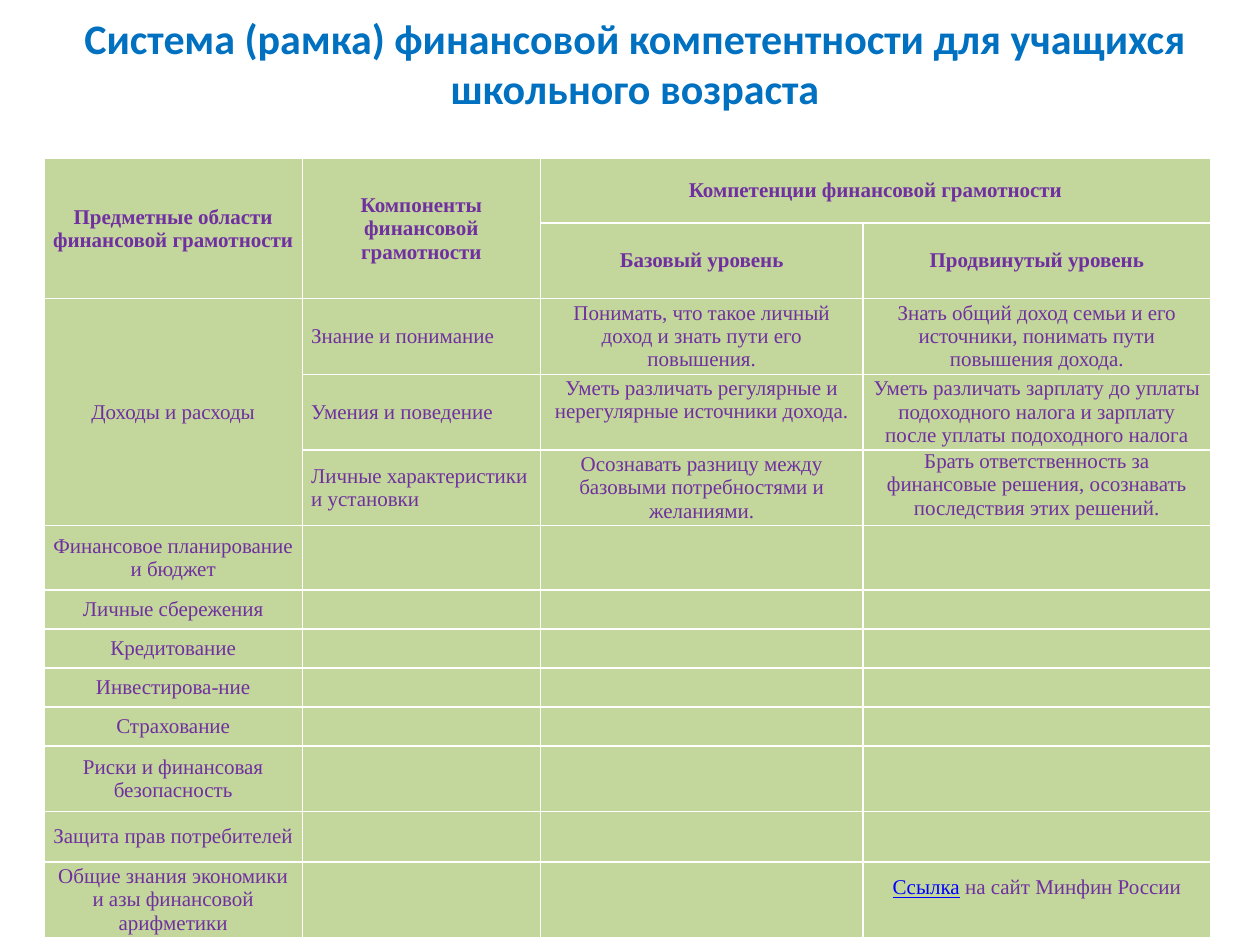
from lxml.etree import SubElement
from pptx import Presentation
from pptx.dml.color import RGBColor
from pptx.enum.text import MSO_ANCHOR, MSO_AUTO_SIZE, PP_ALIGN
from pptx.oxml.ns import qn
from pptx.util import Inches, Pt

BLUE = RGBColor(0x00, 0x70, 0xC0)
PURPLE = RGBColor(0x70, 0x30, 0xA0)
GREEN = RGBColor(0xC3, 0xD6, 0x9B)
LINK_BLUE = RGBColor(0x00, 0x00, 0xFF)
WHITE = RGBColor(0xFF, 0xFF, 0xFF)


def add_run(paragraph, text, font_name, size, color, bold=False):
    run = paragraph.add_run()
    run.text = text
    run.font.name = font_name
    run.font.size = Pt(size)
    run.font.color.rgb = color
    run.font.bold = bold
    return run


def add_borders(cell, color, width):
    properties = cell._tc.get_or_add_tcPr()
    for position, side in enumerate(("lnL", "lnR", "lnT", "lnB")):
        line = SubElement(properties, qn(f"a:{side}"), w=str(width))
        fill = SubElement(line, qn("a:solidFill"))
        SubElement(fill, qn("a:srgbClr"), val=str(color))
        properties.insert(position, line)  # borders precede the cell fill


prs = Presentation()
prs.slide_width, prs.slide_height = Inches(10), Inches(7.5)
slide = prs.slides.add_slide(prs.slide_layouts[6])

# Title
title = slide.shapes.add_textbox(Inches(0.51), Inches(0.05), Inches(9.06), Inches(0.91)).text_frame
title.word_wrap = True
title.auto_size = MSO_AUTO_SIZE.SHAPE_TO_FIT_TEXT
title.paragraphs[0].alignment = PP_ALIGN.CENTER
add_run(title.paragraphs[0],
        "Система (рамка) финансовой компетентности для учащихся школьного возраста",
        "Calibri", 24, BLUE, bold=True)

# Table content: missing trailing cells stay empty
SUBJECTS = ["Финансовое планирование и бюджет", "Личные сбережения", "Кредитование",
            "Инвестирова-ние", "Страхование", "Риски и финансовая безопасность",
            "Защита прав потребителей", "Общие знания экономики и азы финансовой арифметики"]
ROWS = [
    ["Предметные области финансовой грамотности", "Компоненты финансовой грамотности",
     "Компетенции финансовой грамотности", ""],
    ["", "", "Базовый уровень", "Продвинутый уровень"],
    ["Доходы и расходы", "Знание и понимание",
     "Понимать, что такое личный доход и знать пути его повышения.",
     "Знать общий доход семьи и его источники, понимать пути повышения дохода."],
    ["", "Умения и поведение",
     "Уметь различать регулярные и нерегулярные источники дохода.",
     "Уметь различать зарплату до уплаты подоходного налога и зарплату "
     "после уплаты подоходного налога"],
    ["", "Личные характеристики и установки",
     "Осознавать разницу между базовыми потребностями и желаниями.",
     "Брать ответственность за финансовые решения, осознавать последствия этих решений."],
] + [[subject, "", "", ""] for subject in SUBJECTS]
COLUMN_WIDTHS = [2.05, 1.89, 2.56, 2.76]
ROW_HEIGHTS = [0.51] + [0.6] * 4 + [0.51] + [0.31] * 4 + [0.52, 0.4, 0.59]
HEADER_ROWS = 2

competencies = slide.shapes.add_table(
    len(ROWS), len(COLUMN_WIDTHS), Inches(0.35), Inches(1.26),
    Inches(sum(COLUMN_WIDTHS)), Inches(sum(ROW_HEIGHTS))).table
for column, width in zip(competencies.columns, COLUMN_WIDTHS):
    column.width = Inches(width)
for row, height in zip(competencies.rows, ROW_HEIGHTS):
    row.height = Inches(height)

for r, texts in enumerate(ROWS):
    for c, text in enumerate(texts):
        cell = competencies.cell(r, c)
        cell.fill.solid()
        cell.fill.fore_color.rgb = GREEN
        add_borders(cell, WHITE, Pt(1))
        cell.vertical_anchor = MSO_ANCHOR.MIDDLE
        cell.margin_left = cell.margin_right = Inches(0.07)
        cell.margin_top = cell.margin_bottom = 0
        paragraph = cell.text_frame.paragraphs[0]
        left_aligned = c == 1 and r >= HEADER_ROWS
        paragraph.alignment = PP_ALIGN.LEFT if left_aligned else PP_ALIGN.CENTER
        if text:
            add_run(paragraph, text, "Times New Roman", 12, PURPLE, bold=r < HEADER_ROWS)
        else:
            # Keep empty cells from stretching their row
            SubElement(paragraph._p, qn("a:endParaRPr"), sz="1200")

# Link in the last cell
link_cell = competencies.cell(len(ROWS) - 1, 3)
link_line = link_cell.text_frame.paragraphs[0]
add_run(link_line, "Ссылка", "Times New Roman", 12, LINK_BLUE).font.underline = True
add_run(link_line, " на сайт Минфин России", "Times New Roman", 12, PURPLE)

# Cells whose text sits higher than the middle
for raised in (competencies.cell(3, 2), link_cell):
    raised.margin_bottom = Inches(0.19)
competencies.cell(4, 3).vertical_anchor = MSO_ANCHOR.TOP

# Merged cells
for first, last in (((0, 0), (1, 0)), ((0, 1), (1, 1)), ((0, 2), (0, 3)), ((2, 0), (4, 0))):
    competencies.cell(*first).merge(competencies.cell(*last))

prs.save("out.pptx")
